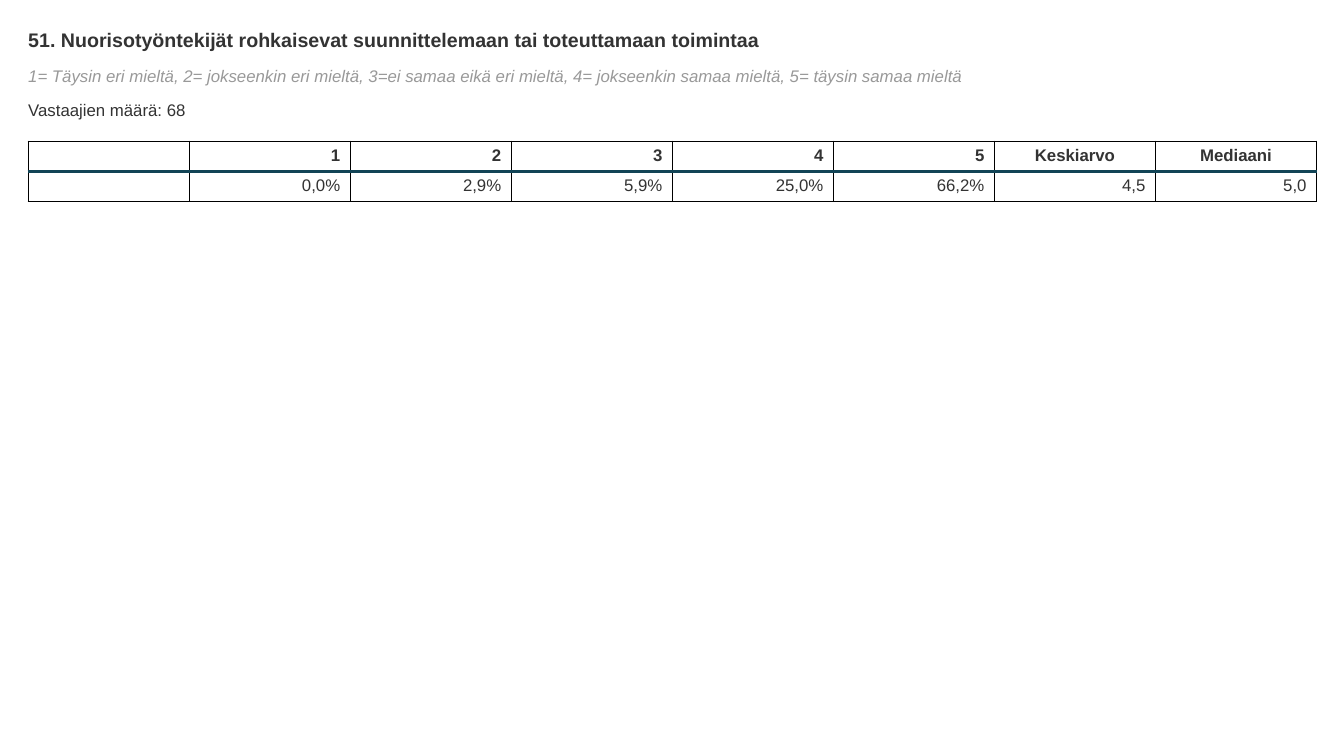
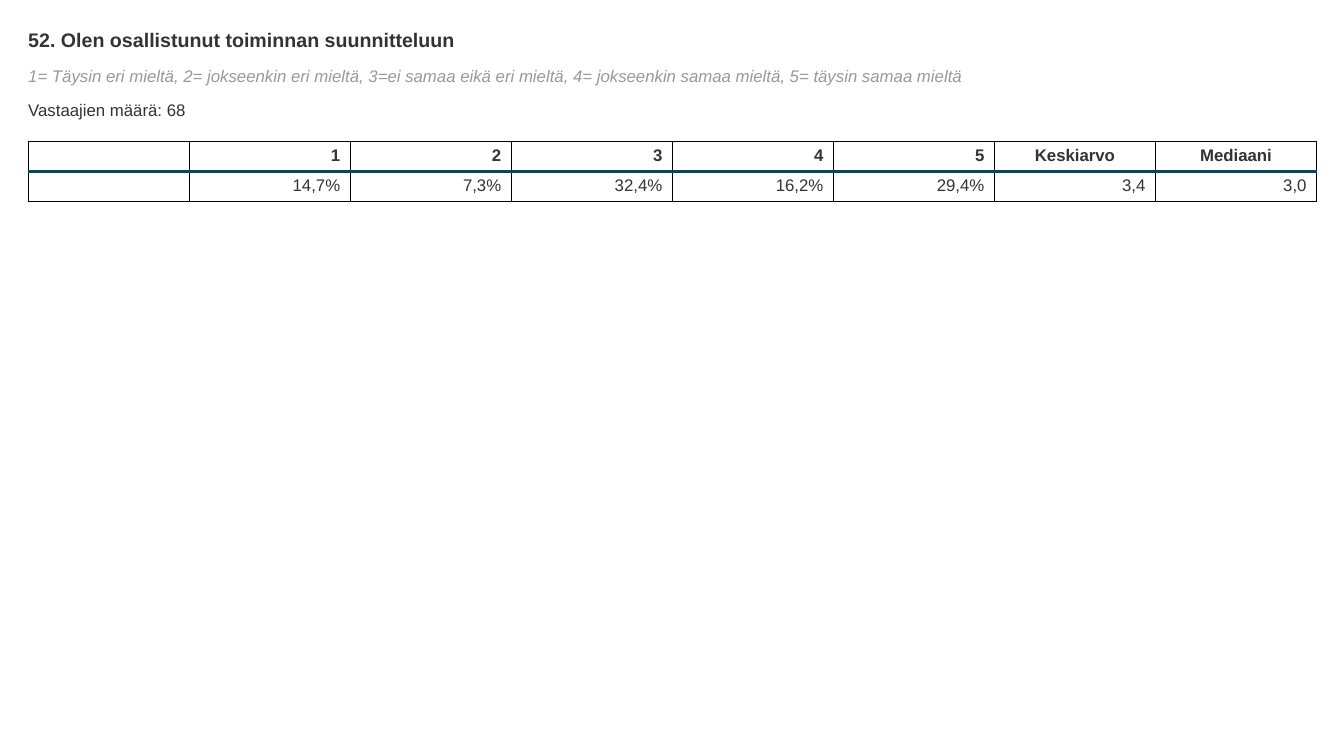
import pptx
import pptx.dml.color
import pptx.enum.text
import pptx.oxml
import pptx.oxml.ns
import pptx.util
from lxml import etree

Inches, Pt = pptx.util.Inches, pptx.util.Pt
ALIGN = pptx.enum.text.PP_ALIGN
qn = pptx.oxml.ns.qn

# Shared style
FONT = "Arial"
TEXT, MUTED, BLACK, RULE, WHITE = "333333", "999999", "000000", "124456", "FFFFFF"
LEFT, WIDTH = 0.28, 12.78
ROW_HEIGHT = 0.3

SCALE = ("1= Täysin eri mieltä, 2= jokseenkin eri mieltä, 3=ei samaa eikä eri mieltä, "
         "4= jokseenkin samaa mieltä, 5= täysin samaa mieltä")
HEADER = ["", "1", "2", "3", "4", "5", "Keskiarvo", "Mediaani"]
QUESTIONS = [
    ("51. Nuorisotyöntekijät rohkaisevat suunnittelemaan tai toteuttamaan toimintaa", 68,
     ["", "0,0%", "2,9%", "5,9%", "25,0%", "66,2%", "4,5", "5,0"]),
    ("52. Olen osallistunut toiminnan suunnitteluun", 68,
     ["", "14,7%", "7,3%", "32,4%", "16,2%", "29,4%", "3,4", "3,0"]),
]


def rgb(color):
    return pptx.dml.color.RGBColor.from_string(color)


def style_paragraph(p, size=12, color=TEXT, bold=False, italic=False, align=ALIGN.LEFT):
    p.alignment = align
    p.font.name, p.font.size = FONT, Pt(size)
    p.font.bold, p.font.italic = bold, italic
    p.font.color.rgb = rgb(color)


def fill_text(sp, text, left, top, width, height, **style):
    """Place a text shape without insets and write one line in it."""
    sp.left, sp.top, sp.width, sp.height = map(Inches, (left, top, width, height))
    tf = sp.text_frame
    tf.text = text
    tf.word_wrap = True
    tf.auto_size = pptx.enum.text.MSO_AUTO_SIZE.SHAPE_TO_FIT_TEXT
    tf.vertical_anchor = pptx.enum.text.MSO_ANCHOR.TOP
    tf.margin_left = tf.margin_right = tf.margin_top = tf.margin_bottom = 0
    style_paragraph(tf.paragraphs[0], **style)


def add_text(slide, text, left, top, width, height, **style):
    sp = slide.shapes.add_textbox(0, 0, 0, 0)
    fill_text(sp, text, left, top, width, height, **style)


def set_borders(cell, **borders):
    """Draw borders given as side=(colour, points), in the order L, R, T, B."""
    tc_pr = cell._tc.get_or_add_tcPr()
    for i, (side, (color, points)) in enumerate(borders.items()):
        ln = etree.Element(qn(f"a:ln{side}"), w=str(Pt(points)))
        fill = etree.SubElement(ln, qn("a:solidFill"))
        etree.SubElement(fill, qn("a:srgbClr"), val=color)
        tc_pr.insert(i, ln)


def add_results(slide, rows, left, top, width):
    """Table of answer shares, with a coloured rule below the header."""
    table = slide.shapes.add_table(
        len(rows), len(HEADER), Inches(left), Inches(top),
        Inches(width), Inches(ROW_HEIGHT * len(rows))).table
    table.first_row = table.horz_banding = False
    thin, rule = (BLACK, 1), (RULE, 2)
    for r, values in enumerate(rows):
        is_header = r == 0
        for c, value in enumerate(values):
            cell = table.cell(r, c)
            cell.text = value
            cell.fill.solid()
            cell.fill.fore_color.rgb = rgb(WHITE)
            centred = is_header and c > 5
            p = cell.text_frame.paragraphs[0]
            style_paragraph(p, bold=is_header, align=ALIGN.CENTER if centred else ALIGN.RIGHT)
            if not value:  # keeps the row of an empty cell low
                etree.SubElement(p._p, qn("a:endParaRPr"), sz="1200")
            set_borders(cell, L=thin, R=thin, T=thin if is_header else rule,
                        B=rule if is_header else thin)


def add_question(prs, question, respondents, values):
    slide = prs.slides.add_slide(prs.slide_layouts[5])
    fill_text(slide.shapes.title, question, LEFT, 0.28, WIDTH, 0.23, size=14, bold=True)
    add_text(slide, SCALE, LEFT, 0.65, WIDTH, 0.2, color=MUTED, italic=True)
    add_text(slide, f"Vastaajien määrä: {respondents}", LEFT, 0.99, WIDTH, 0.2)
    add_results(slide, [HEADER, values], LEFT, 1.4, WIDTH)


def main():
    prs = pptx.Presentation()
    prs.slide_width, prs.slide_height = Inches(13.33), Inches(7.5)
    for question in QUESTIONS:
        add_question(prs, *question)
    prs.save("out.pptx")


if __name__ == "__main__":
    main()
